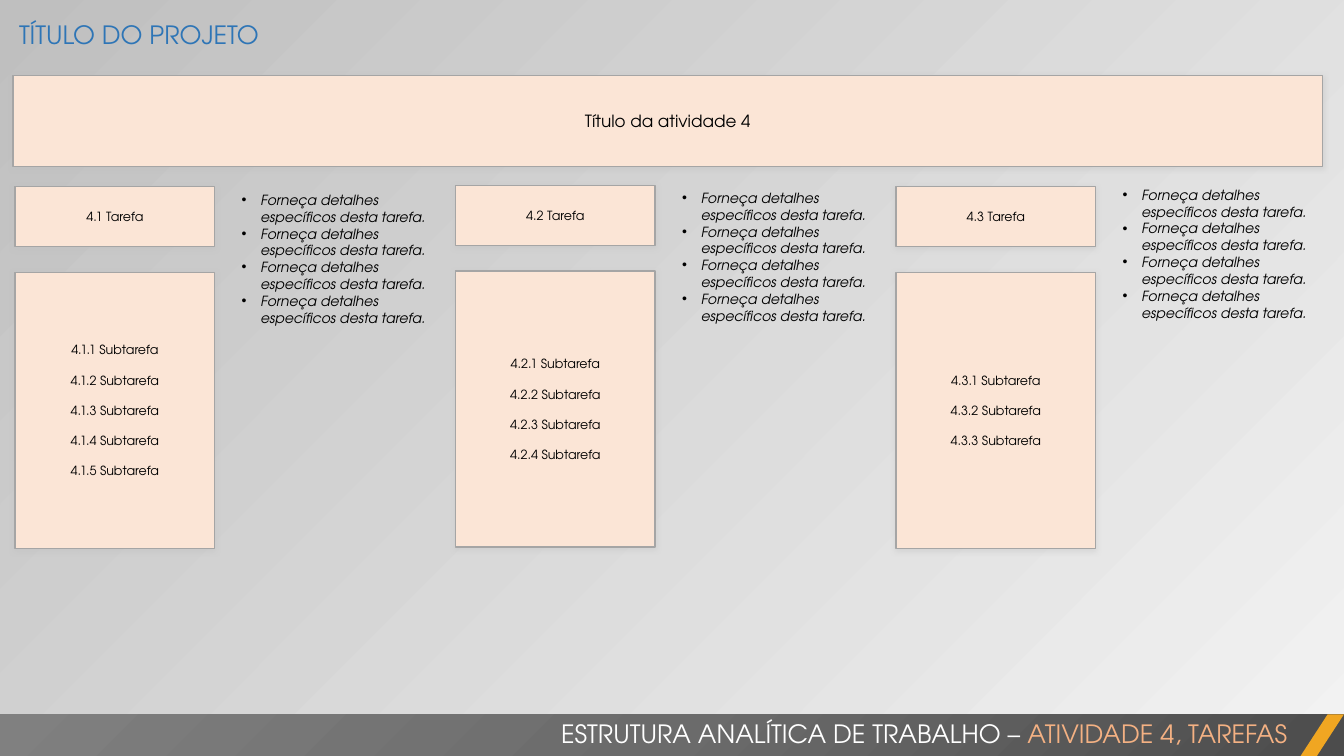
from dataclasses import dataclass

from pptx import Presentation
from pptx.dml import color
from pptx.enum import shapes, text
from pptx.oxml import parse_xml
from pptx.oxml.ns import nsdecls, qn
from pptx.util import Cm, Pt

RGBColor = color.RGBColor
BLACK = RGBColor(0x00, 0x00, 0x00)
WHITE = RGBColor(0xFF, 0xFF, 0xFF)
PEACH = RGBColor(0xFB, 0xE5, 0xD6)
GRAY = RGBColor(0xA5, 0xA5, 0xA5)
SILVER = RGBColor(0xBF, 0xBF, 0xBF)
PALE = RGBColor(0xF2, 0xF2, 0xF2)
CHARCOAL = RGBColor(0x4C, 0x4C, 0x4C)
SLATE = RGBColor(0x6B, 0x6B, 0x6B)
ASH = RGBColor(0x80, 0x80, 0x80)
AMBER = RGBColor(0xF0, 0xA6, 0x22)
BLUE = RGBColor(0x2E, 0x75, 0xB6)
ORANGE = RGBColor(0xF4, 0xB1, 0x83)

FONT = "TeX Gyre Adventor"
DETAIL = "Forneça detalhes específicos desta tarefa."
DETAIL_COUNT = 4
FIRST_LEFT, COLUMN_PITCH = 0.38, 11.1
BOX_WIDTH, TASK_HEIGHT, SUBTASK_HEIGHT = 5.03, 1.52, 6.96
SUBTASK_DROP, DETAIL_SHIFT = 2.16, 5.46
FOOTER_TOP, FOOTER_HEIGHT = 18.0, 1.06


@dataclass(frozen=True)
class Area:
    left: float
    top: float
    width: float
    height: float

    def lengths(self) -> tuple:
        return Cm(self.left), Cm(self.top), Cm(self.width), Cm(self.height)


@dataclass(frozen=True)
class Stop:
    position: int
    rgb: RGBColor
    opacity: int = 100


@dataclass(frozen=True)
class Task:
    number: int
    subtask_count: int
    top: float
    detail_top: float


TASKS = [Task(1, 5, 4.7, 4.7), Task(2, 4, 4.67, 4.65), Task(3, 3, 4.7, 4.57)]


def style_font(font, size: float, rgb: RGBColor, italic: bool = False) -> None:
    font.name = FONT
    font.size = Pt(size)
    font.italic = italic
    font.color.rgb = rgb


def set_gradient(fill, element, stops: list[Stop], direction: str) -> None:
    fill.gradient()
    marks = "".join(
        f'<a:gs pos="{stop.position * 1000}"><a:srgbClr val="{stop.rgb}">'
        f'<a:alpha val="{stop.opacity * 1000}"/></a:srgbClr></a:gs>'
        for stop in stops
    )
    gradient = parse_xml(
        f'<a:gradFill {nsdecls("a")} rotWithShape="1">'
        f"<a:gsLst>{marks}</a:gsLst>{direction}</a:gradFill>"
    )
    default = next(element.iter(qn("a:gradFill")))
    default.getparent().replace(default, gradient)


def add_plain_shape(page, kind, area: Area):
    shape = page.shapes.add_shape(kind, *area.lengths())
    shape.shadow.inherit = False
    shape.line.fill.background()
    return shape


def add_box(page, area: Area, lines: list[str], size: float) -> None:
    box = add_plain_shape(page, shapes.MSO_SHAPE.RECTANGLE, area)
    box.fill.solid()
    box.fill.fore_color.rgb = PEACH
    box.line.color.rgb = GRAY
    box.line.width = Pt(1)
    box.element.spPr.find(qn("a:effectLst")).append(parse_xml(
        f'<a:outerShdw {nsdecls("a")} blurRad="50800" dist="12700" dir="5400000" '
        f'algn="t" rotWithShape="0"><a:srgbClr val="{SILVER}">'
        f'<a:alpha val="40000"/></a:srgbClr></a:outerShdw>'
    ))
    frame = box.text_frame
    frame.vertical_anchor = text.MSO_ANCHOR.MIDDLE
    frame.text = "\n".join(lines)
    for index, para in enumerate(frame.paragraphs):
        para.alignment = text.PP_ALIGN.CENTER
        para.space_before = Pt(10.8 if index else 0)
        style_font(para.font, size, BLACK)


def add_text_box(page, area: Area):
    frame = page.shapes.add_textbox(*area.lengths()).text_frame
    frame.word_wrap = True
    return frame


def add_heading(page, area: Area, spans: list, alignment) -> None:
    para = add_text_box(page, area).paragraphs[0]
    para.alignment = alignment
    for wording, rgb in spans:
        span = para.add_run()
        span.text = wording
        style_font(span.font, 18, rgb)


def add_details(page, area: Area) -> None:
    frame = add_text_box(page, area)
    frame.text = "\n".join([DETAIL] * DETAIL_COUNT)
    for para in frame.paragraphs:
        style_font(para.font, 10, BLACK, italic=True)
        properties = para._p.get_or_add_pPr()
        properties.set("marL", str(Cm(0.48)))
        properties.set("indent", str(-Cm(0.48)))
        bullet_font = parse_xml(f'<a:buFont {nsdecls("a")} typeface="Arial"/>')
        bullet = parse_xml(f'<a:buChar {nsdecls("a")} char="•"/>')
        properties.insert_element_before(bullet_font, "a:defRPr")
        properties.insert_element_before(bullet, "a:defRPr")


def add_task(page, column: int, task: Task) -> None:
    left = FIRST_LEFT + column * COLUMN_PITCH
    add_box(page, Area(left, task.top, BOX_WIDTH, TASK_HEIGHT),
            [f"4.{task.number} Tarefa"], 9)
    subtasks = [f"4.{task.number}.{item} Subtarefa"
                for item in range(1, task.subtask_count + 1)]
    add_box(page, Area(left, task.top + SUBTASK_DROP, BOX_WIDTH, SUBTASK_HEIGHT),
            subtasks, 9)
    add_details(page, Area(left + DETAIL_SHIFT, task.detail_top, 5.23, 7.62))


def add_footer(page) -> None:
    band = add_plain_shape(page, shapes.MSO_SHAPE.RECTANGLE,
                           Area(0, FOOTER_TOP, 33.87, FOOTER_HEIGHT))
    set_gradient(band.fill, band.element,
                 [Stop(0, CHARCOAL), Stop(50, SLATE), Stop(100, ASH)],
                 '<a:path path="circle"><a:fillToRect l="100000" t="100000"/></a:path>')
    accent = add_plain_shape(page, shapes.MSO_SHAPE.PARALLELOGRAM,
                             Area(32.77, FOOTER_TOP, 1.1, FOOTER_HEIGHT))
    accent.adjustments[0] = 0.65
    accent.fill.solid()
    accent.fill.fore_color.rgb = AMBER
    add_heading(page, Area(6.15, 17.98, 26.54, 1.02),
                [("ESTRUTURA ANALÍTICA DE TRABALHO – ", WHITE),
                 ("ATIVIDADE 4, TAREFAS", ORANGE)], text.PP_ALIGN.RIGHT)


def main() -> None:
    deck = Presentation()
    deck.slide_width, deck.slide_height = Cm(33.87), Cm(19.05)
    page = deck.slides.add_slide(deck.slide_layouts[6])
    set_gradient(page.background.fill, page.element,
                 [Stop(0, PALE, 40), Stop(100, SILVER)],
                 '<a:lin ang="13500000" scaled="0"/>')
    add_box(page, Area(0.33, 1.9, 33, 2.29), ["Título da atividade 4"], 12)
    add_footer(page)
    add_heading(page, Area(0.23, 0.36, 25.68, 1.02),
                [("TÍTULO DO PROJETO", BLUE)], text.PP_ALIGN.LEFT)
    for column, task in enumerate(TASKS):
        add_task(page, column, task)
    deck.save("out.pptx")


if __name__ == "__main__":
    main()
